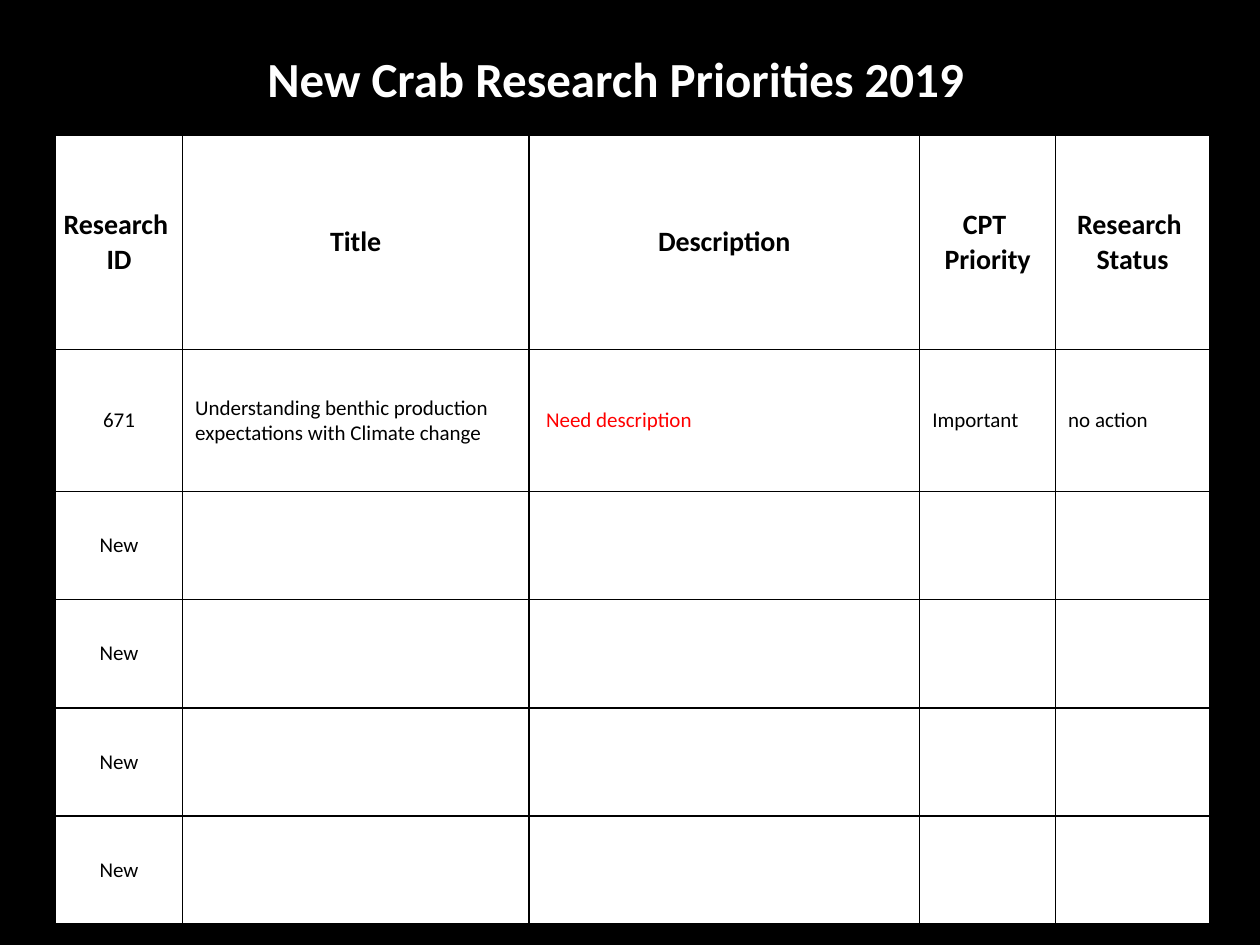
from lxml import etree
from pptx import Presentation
from pptx import util as u
from pptx.dml.color import RGBColor
from pptx.enum import text
from pptx.oxml import ns

BLACK = RGBColor(0, 0, 0)
WHITE = RGBColor(255, 255, 255)
RED = RGBColor(255, 0, 0)
COLUMN_WIDTHS = [2.56, 6.98, 7.88, 2.74, 3.1]
ROW_HEIGHTS = [4.33, 2.86] + [2.18] * 4
HEADINGS = ["Research \nID", "Title", "Description", "CPT \nPriority", "Research \nStatus"]
PRIORITY = [
    "671",
    "Understanding benthic production expectations with Climate change",
    " Need description",
    "Important",
    "no action",
]


def write_text(frame, content, size=12, color=BLACK, bold=False,
               align=text.PP_ALIGN.LEFT):
    frame.text = content
    for para in frame.paragraphs:
        para.alignment = align
        para.font.name = "Calibri"
        para.font.size = u.Pt(size)
        para.font.bold = bold
        para.font.color.rgb = color


def add_title(page, content):
    box = page.shapes.title
    box.left, box.top, box.width, box.height = (
        u.Cm(value) for value in (3.23, 0.84, 18.36, 1.45))
    frame = box.text_frame
    frame.word_wrap = True
    frame.auto_size = text.MSO_AUTO_SIZE.NONE
    frame.vertical_anchor = text.MSO_ANCHOR.MIDDLE
    write_text(frame, content, size=28, color=WHITE, bold=True,
               align=text.PP_ALIGN.CENTER)


def style_cell(cell):
    properties = cell._tc.get_or_add_tcPr()
    for side in ("lnL", "lnR", "lnT", "lnB"):
        line = etree.SubElement(properties, ns.qn(f"a:{side}"), w=str(u.Pt(1)))
        fill = etree.SubElement(line, ns.qn("a:solidFill"))
        etree.SubElement(fill, ns.qn("a:srgbClr"), val=str(BLACK))
    cell.fill.solid()
    cell.fill.fore_color.rgb = WHITE
    cell.vertical_anchor = text.MSO_ANCHOR.MIDDLE


def add_grid(page):
    grid = page.shapes.add_table(
        len(ROW_HEIGHTS), len(COLUMN_WIDTHS), u.Cm(1.12), u.Cm(2.72),
        u.Cm(sum(COLUMN_WIDTHS)), u.Cm(sum(ROW_HEIGHTS))).table
    grid.horz_banding = False
    for column, width in zip(grid.columns, COLUMN_WIDTHS):
        column.width = u.Cm(width)
    for row, height in zip(grid.rows, ROW_HEIGHTS):
        row.height = u.Cm(height)
    for cell in grid.iter_cells():
        style_cell(cell)
    return grid


def fill_grid(grid):
    center = text.PP_ALIGN.CENTER
    for column, heading in enumerate(HEADINGS):
        cell = grid.cell(0, column)
        cell.margin_left = cell.margin_right = 0
        cell.margin_top = cell.margin_bottom = 0
        write_text(cell.text_frame, heading, size=16, bold=True, align=center)
    for column, content in enumerate(PRIORITY):
        write_text(grid.cell(1, column).text_frame, content,
                   color=RED if column == 2 else BLACK,
                   align=center if column == 0 else text.PP_ALIGN.LEFT)
    for row in range(2, len(ROW_HEIGHTS)):
        write_text(grid.cell(row, 0).text_frame, "New", align=center)


def main():
    deck = Presentation()
    deck.slide_width, deck.slide_height = u.Cm(25.4), u.Cm(19.05)
    page = deck.slides.add_slide(deck.slide_layouts[5])
    page.background.fill.solid()
    page.background.fill.fore_color.rgb = BLACK
    add_title(page, "New Crab Research Priorities 2019")
    fill_grid(add_grid(page))
    deck.save("out.pptx")


if __name__ == "__main__":
    main()
